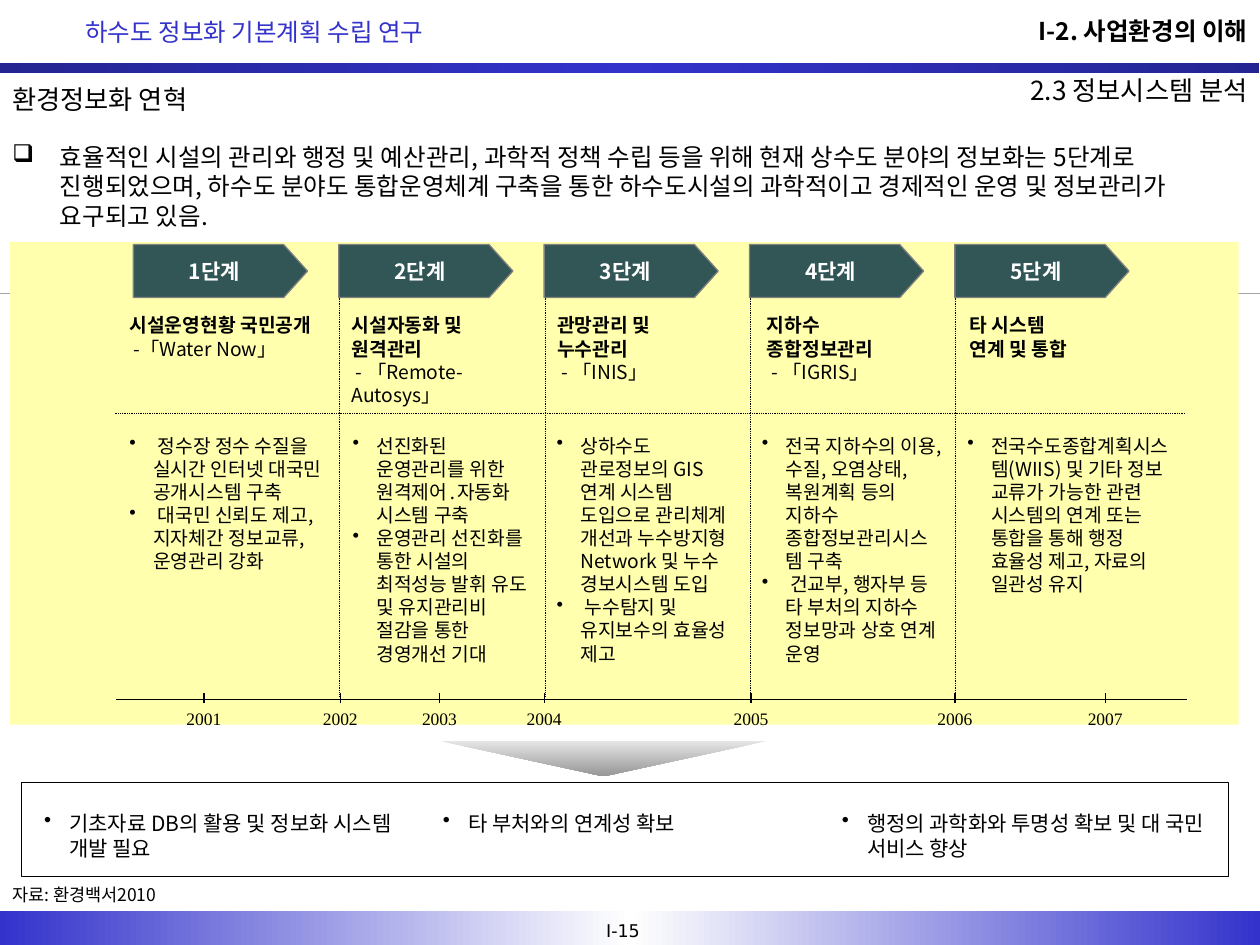
from lxml.etree import SubElement
from pptx import Presentation
from pptx.dml.color import RGBColor
from pptx.enum.dml import MSO_LINE
from pptx.enum.shapes import MSO_CONNECTOR, MSO_SHAPE
from pptx.enum.text import MSO_ANCHOR, PP_ALIGN
from pptx.oxml import parse_xml
from pptx.oxml.ns import nsdecls, qn
from pptx.util import Cm, Pt

HUE = {"ink": "000000", "white": "FFFFFF", "blue": "3333CC", "navy": "242492",
       "teal": "325656", "gray": "808080", "pale": "A6A6A6", "sand": "FFFFAD",
       "light": "E5E5E5", "dark": "969696"}
SANS = "Noto Sans CJK KR"
MID = {"vertical_anchor": MSO_ANCHOR.MIDDLE}
SNUG = {**MID, "word_wrap": False}
RIGHT = {"alignment": PP_ALIGN.RIGHT}
CENTER = {"alignment": PP_ALIGN.CENTER}

STAGES = [
    (["시설운영현황 국민공개"], " -「Water Now」", 2.36, 4.47,
     [" 정수장 정수 수질을 실시간 인터넷 대국민 공개시스템 구축",
      " 대국민 신뢰도 제고, 지자체간 정보교류, 운영관리 강화"], 2.36, 4.45),
    (["시설자동화 및 원격관리"], " - 「Remote-Autosys」", 6.84, 4.14,
     ["선진화된 운영관리를 위한 원격제어․자동화 시스템 구축",
      "운영관리 선진화를 통한 시설의 최적성능 발휘 유도 및 유지관리비 절감을 통한 경영개선 기대"], 6.86, 4.11),
    (["관망관리 및", "누수관리"], " - 「INIS」", 10.98, 4.14,
     ["상하수도 관로정보의 GIS 연계 시스템 도입으로 관리체계 개선과 누수방지형 Network 및 누수 경보시스템 도입",
      " 누수탐지 및 유지보수의 효율성 제고"], 10.97, 4.19),
    (["지하수", "종합정보관리"], " - 「IGRIS」", 15.21, 3.02,
     ["전국 지하수의 이용, 수질, 오염상태, 복원계획 등의 지하수 종합정보관리시스템 구축",
      " 건교부, 행자부 등 타 부처의 지하수 정보망과 상호 연계 운영"], 15.11, 4.16),
    (["타 시스템", "연계 및 통합"], "", 19.3, 3.02,
     ["전국수도종합계획시스템(WIIS) 및 기타 정보 교류가 가능한 관련 시스템의 연계 또는 통합을 통해 행정 효율성 제고, 자료의 일관성 유지"],
     19.25, 4.78),
]
YEARS = {"2001": 4.11, "2002": 6.86, "2003": 8.86, "2004": 10.97,
         "2005": 15.14, "2006": 19.25, "2007": 22.28}
NEEDS = ["기초자료 DB의 활용 및 정보화 시스템 개발 필요", "타 부처와의 연계성 확보",
         "행정의 과학화와 투명성 확보 및 대 국민 서비스 향상"]


def apply(thing, values):
    """Set each attribute named in a dict."""
    for name, value in values.items():
        setattr(thing, name, value)


def color(name):
    """Return the named colour."""
    return RGBColor.from_string(HUE[name])


def write(shape, lines, size, hue="ink", bold=False, font=SANS, frame=None, para=None, mark=None):
    """Fill a shape with paragraphs; a mark is a bullet and its indent."""
    body = shape.text_frame
    apply(body, {"word_wrap": True, "vertical_anchor": MSO_ANCHOR.TOP, **(frame or {})})
    for i, line in enumerate(lines):
        text, heavy = line if isinstance(line, tuple) else (line, bold)
        item = body.add_paragraph() if i else body.paragraphs[0]
        apply(item, {"alignment": PP_ALIGN.LEFT, **(para or {})})
        if mark:
            props = item._p.get_or_add_pPr()
            props.set("marL", str(Cm(mark[1])))
            props.set("indent", str(-Cm(mark[1])))
            SubElement(props, qn("a:buChar")).set("char", mark[0])
        run = item.add_run()
        run.text = text
        apply(run.font, {"size": Pt(size), "bold": heavy, "name": font})
        run.font.color.rgb = color(hue)
        props = run._r.get_or_add_rPr()
        props.set("kern", "0")
        SubElement(props, qn("a:ea")).set("typeface", font)


def label(slide, box, lines, size, **style):
    """Add a text box."""
    write(slide.shapes.add_textbox(*map(Cm, box)), lines, size, **style)


def block(slide, box, fill=None, edge=None, kind=MSO_SHAPE.RECTANGLE):
    """Add a plain shape with a fill and an edge."""
    shape = slide.shapes.add_shape(kind, *map(Cm, box))
    shape.shadow.inherit = False
    if fill:
        shape.fill.solid()
        shape.fill.fore_color.rgb = color(fill)
    if edge:
        shape.line.color.rgb = color(edge)
        shape.line.width = Pt(0.75)
    else:
        shape.line.fill.background()
    return shape


def blend(shape, hues, angle=0):
    """Fill a shape with evenly spaced gradient stops."""
    step = 100000 // (len(hues) - 1)
    stops = "".join(f'<a:gs pos="{i * step}"><a:srgbClr val="{HUE[hue]}"/></a:gs>'
                    for i, hue in enumerate(hues))
    shape.fill.background()
    props = shape._element.spPr
    props.replace(props.find(qn("a:noFill")), parse_xml(
        f'<a:gradFill {nsdecls("a")} rotWithShape="0"><a:gsLst>{stops}</a:gsLst>'
        f'<a:lin ang="{angle * 60000}" scaled="0"/></a:gradFill>'))


def rule(slide, start, end, width=0.75, hue="ink", dots=False):
    """Draw a straight line."""
    line = slide.shapes.add_connector(MSO_CONNECTOR.STRAIGHT, *map(Cm, start + end))
    line.line.color.rgb = color(hue)
    line.line.width = Pt(width)
    if dots:
        line.line.dash_style = MSO_LINE.ROUND_DOT
    SubElement(line._element.spPr, qn("a:effectLst"))


def header(slide, x, y, w):
    """Draw the titles and the blue band."""
    blend(block(slide, (x - 0.02, y + 1.27, w, 0.2)), ["navy", "blue", "navy"])
    label(slide, (x + 1.47, y + 0.18, 12.7, 0.91), ["하수도 정보화 기본계획 수립 연구"], 14, hue="blue", frame=MID)
    label(slide, (x + w - 5.38, y + 0.2, 5.38, 0.84), ["I-2. 사업환경의 이해"], 14, bold=True, para=RIGHT)
    label(slide, (x + 4.45, y + 1.27, w - 4.45, 1.07), ["2.3 정보시스템 분석"], 15, frame=MID, para=RIGHT)
    label(slide, (x, y + 1.47, 11.89, 1.07), ["환경정보화 연혁"], 15, frame=MID)
    rule(slide, (x, y + 5.92), (x + w, y + 5.92), 0.25, "pale", True)


def footer(slide, x, y, w):
    """Draw the source note, the bottom band and the page number."""
    label(slide, (x, y - 0.68, 3.71, 0.69), ["자료: 환경백서2010"], 10, frame=SNUG)
    blend(block(slide, (x, y, w, 0.69)), ["blue", "white", "blue"])
    label(slide, (x + w / 2 - 0.85, y + 0.06, 1.42, 0.69), ["I-15"], 10,
          font="DejaVu Sans", frame=SNUG, para=CENTER)


def stages(slide, x, y, w, h):
    """Draw the five stages side by side on a panel."""
    block(slide, (x, y, w, h), "sand")
    rule(slide, (x + 2.11, y + 3.45), (x + 23.7, y + 3.45), 0.5, dots=True)
    for i, (heads, system, start, wide, points, inset, span) in enumerate(STAGES):
        left = x + 2.49 + 4.14 * i
        if i:
            rule(slide, (left + 0.02, y + 9.16), (left + 0.02, y + 1.12), 0.5, dots=True)
        arrow = block(slide, (left, y + 0.05, 3.51, 1.07), "teal", "gray", MSO_SHAPE.PENTAGON)
        arrow.adjustments[0] = 0.45
        write(arrow, [f"{i + 1}단계"], 12, hue="white", bold=True, frame=SNUG, para=CENTER)
        lines = heads + ([(system, False)] if system else [])
        label(slide, (start, y + 1.32, wide, 1.68), lines, 11, bold=True)
        label(slide, (inset, y + 3.74, span, 4.95), points, 11, mark=("•", 0.48))


def axis(slide, x, y, w):
    """Draw the time axis with its years."""
    rule(slide, (x, y), (x + w, y))
    for year, spot in YEARS.items():
        rule(slide, (spot, y + 0.08), (spot, y - 0.12))
        label(slide, (spot - 0.61, y + 0.05, 1.22, 0.69), [year], 10,
              font="Times New Roman", frame=SNUG, para=CENTER)


def needs(slide, x, y, w, h):
    """Draw the pointer and the framed needs below it."""
    wedge = block(slide, (x + 8.46, y - 0.83, 6.55, 0.71), kind=MSO_SHAPE.ISOSCELES_TRIANGLE)
    wedge.rotation = 180
    blend(wedge, ["light", "dark"], 90)
    block(slide, (x, y, w, h), "white", "ink")
    for i, need in enumerate(NEEDS):
        cell = block(slide, (x + 0.21 + 8.04 * i, y + 0.44, 7.82, 1.27), "white")
        write(cell, [need], 12, mark=("•", 0.51))


def main():
    """Build and save the slide."""
    deck = Presentation()
    apply(deck, {"slide_width": Cm(25.4), "slide_height": Cm(19.05)})
    slide = deck.slides.add_slide(deck.slide_layouts[6])
    header(slide, 0, 0, 25.4)
    label(slide, (0, 2.74, 25.4, 1.63),
          ["효율적인 시설의 관리와 행정 및 예산관리, 과학적 정책 수립 등을 위해 현재 상수도 분야의 정보화는 5단계로 "
           "진행되었으며, 하수도 분야도 통합운영체계 구축을 통한 하수도시설의 과학적이고 경제적인 운영 및 "
           "정보관리가 요구되고 있음."], 14, mark=("❑", 0.96))
    stages(slide, 0.2, 4.88, 24.77, 9.73)
    axis(slide, 2.34, 14.1, 21.59)
    needs(slide, 0.43, 15.77, 24.33, 1.9)
    footer(slide, 0, 18.36, 25.4)
    deck.save("out.pptx")


if __name__ == "__main__":
    main()
